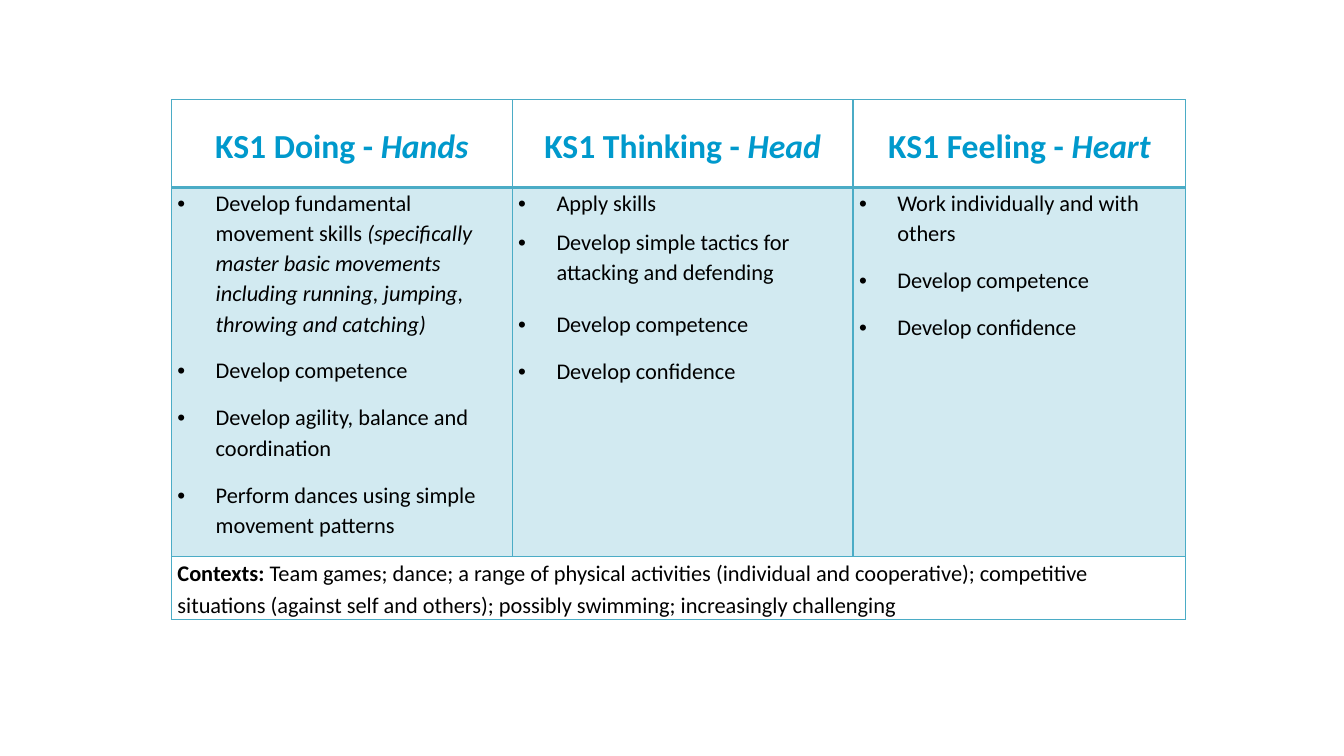
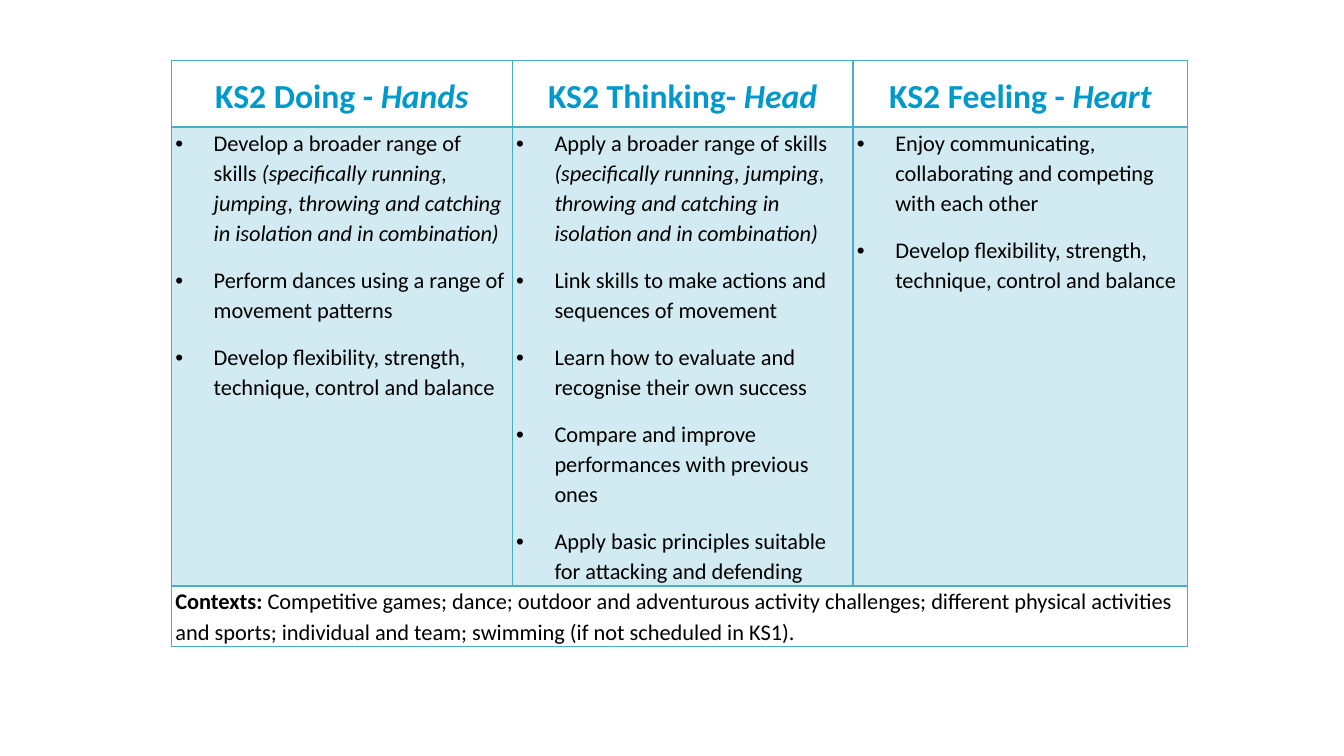
from dataclasses import dataclass

from lxml import etree
from pptx import Presentation
from pptx import util as u
from pptx.dml.color import RGBColor
from pptx.enum import text
from pptx.oxml import ns


@dataclass(frozen=True)
class Theme:
    """Colours, type sizes and line widths used by every slide."""
    font: str = "Calibri"
    heading: str = "0099CC"
    ink: str = "000000"
    panel: str = "D2EAF1"
    rule: str = "4BACC6"
    heading_size: float = 24
    body_size: float = 16
    thin: float = 1
    thick: float = 2.25
    column: float = 3.38
    indent: float = 0.38


T = Theme()
HEADING = {"name": T.font, "size": u.Pt(T.heading_size), "bold": True}
BODY = {"name": T.font, "size": u.Pt(T.body_size), "bold": False}
SPACED = {"space_before": u.Pt(6), "space_after": u.Pt(6)}
TIGHT = {"space_before": u.Pt(0), "space_after": u.Pt(10)}

KS1 = {
    "box": (1.7, 0.99, 10.06, 5.14),
    "rows": (0.87, 3.66),
    "inset": 0.06,
    "headings": [("KS1 Doing - ", "Hands"), ("KS1 Thinking - ", "Head"),
                 ("KS1 Feeling - ", "Heart")],
    "lists": [
        [("Develop fundamental movement skills ",
          "(specifically master basic movements including running, jumping, "
          "throwing and catching)"),
         ("Develop competence",),
         ("Develop agility, balance and coordination",),
         ("Perform dances using simple movement patterns",)],
        [("Apply skills",),
         ("Develop simple tactics for attacking and defending",),
         ("Develop competence",),
         ("Develop confidence",)],
        [("Work individually and with others",),
         ("Develop competence",),
         ("Develop confidence",)],
    ],
    "tight": {(1, 1)},
    "contexts": " Team games; dance; a range of physical activities (individual and "
                "cooperative); competitive situations (against self and others); "
                "possibly swimming; increasingly challenging",
    "contexts_spacing": 1.15,
}

KS2 = {
    "box": (1.7, 0.6, 10.08, 5.73),
    "rows": (0.66, 4.48),
    "inset": 0.04,
    "headings": [("KS2 Doing - ", "Hands"), ("KS2 Thinking- ", "Head"),
                 ("KS2 Feeling - ", "Heart")],
    "lists": [
        [("Develop a broader range of skills ",
          "(specifically running, jumping, throwing and catching in isolation "
          "and in combination)"),
         ("Perform dances using a range of movement patterns",),
         ("Develop flexibility, strength, technique, control and balance",)],
        [("Apply a broader range of skills ",
          "(specifically running, jumping, throwing and catching in isolation "
          "and in combination)"),
         ("Link skills to make actions and sequences of movement",),
         ("Learn how to evaluate and recognise their own success",),
         ("Compare and improve performances with previous ones",),
         ("Apply basic principles suitable for attacking and defending",)],
        [("Enjoy communicating, collaborating and competing with each other",),
         ("Develop flexibility, strength, technique, control and balance",)],
    ],
    "tight": set(),
    "contexts": " Competitive games; dance; outdoor and adventurous activity challenges; "
                "different physical activities and sports; individual and team; "
                "swimming (if not scheduled in KS1).",
    "contexts_spacing": 1.1,
}


def apply(obj, values):
    """Set each named attribute of an object."""
    for name, value in values.items():
        setattr(obj, name, value)


def add_run(p, words, font, color, **extra):
    """Append a formatted run to a paragraph."""
    r = p.add_run()
    r.text = words
    apply(r.font, {**font, **extra})
    r.font.color.rgb = RGBColor.from_string(color)


def add_bullet(p):
    """Give a paragraph a round bullet and a hanging indent."""
    pPr = p._p.get_or_add_pPr()
    indent = u.Inches(T.indent)
    pPr.set("marL", str(indent))
    pPr.set("indent", str(-indent))
    etree.SubElement(pPr, ns.qn("a:buFont")).set("typeface", "Arial")
    etree.SubElement(pPr, ns.qn("a:buChar")).set("char", "•")


def style_cell(cell, inset, widths, fill=None):
    """Set a cell's margins, borders (left, right, top, bottom) and fill."""
    apply(cell, {"margin_left": u.Inches(inset), "margin_right": u.Inches(inset),
                 "margin_top": 0, "margin_bottom": 0})
    tcPr = cell._tc.get_or_add_tcPr()
    for side, width in zip("LRTB", widths):
        ln = etree.SubElement(tcPr, ns.qn(f"a:ln{side}"), w=str(u.Pt(width)))
        solid = etree.SubElement(ln, ns.qn("a:solidFill"))
        etree.SubElement(solid, ns.qn("a:srgbClr"), val=T.rule)
    if fill:
        cell.fill.solid()
        cell.fill.fore_color.rgb = RGBColor.from_string(fill)
    else:
        cell.fill.background()


def fill_heading(cell, words, inset):
    """Write one column heading, its second part in italics."""
    style_cell(cell, inset, (T.thin, T.thin, T.thin, T.thick))
    cell.vertical_anchor = text.MSO_ANCHOR.MIDDLE
    p = cell.text_frame.paragraphs[0]
    apply(p, {"alignment": text.PP_ALIGN.CENTER, "line_spacing": 1.15,
              "space_after": u.Pt(6)})
    for part, italic in zip(words, (False, True)):
        add_run(p, part, HEADING, T.heading, italic=italic)


def fill_list(cell, items, inset, tight):
    """Write the bulleted list of one column."""
    style_cell(cell, inset, (T.thin, T.thin, T.thick, T.thin), T.panel)
    tf = cell.text_frame
    for i, item in enumerate(items):
        p = tf.paragraphs[0] if i == 0 else tf.add_paragraph()
        add_bullet(p)
        apply(p, {"line_spacing": 1.1, **(TIGHT if i in tight else SPACED)})
        if i == 0:
            p.space_before = u.Pt(0)
        for part, italic in zip(item, (False, True)):
            add_run(p, part, BODY, T.ink, italic=italic)


def fill_contexts(cells, words, inset, spacing):
    """Merge the last row and write the contexts in it."""
    for cell in cells:
        style_cell(cell, inset, (T.thin,) * 4)
    cells[0].merge(cells[-1])
    p = cells[0].text_frame.paragraphs[0]
    p.line_spacing = spacing
    add_run(p, "Contexts:", BODY, T.ink, bold=True)
    add_run(p, words, BODY, T.ink)


def add_stage_table(s, stage):
    """Place the table of one key stage in its box."""
    left, top, width, height = stage["box"]
    inset = stage["inset"]
    table = s.shapes.add_table(3, 3, *map(u.Inches, stage["box"])).table
    apply(table, {"first_row": False, "horz_banding": False})
    widths = (T.column, T.column, width - 2 * T.column)
    heights = (*stage["rows"], height - sum(stage["rows"]))
    for column, w in zip(table.columns, widths):
        column.width = u.Inches(w)
    for row, h in zip(table.rows, heights):
        row.height = u.Inches(h)
    for c, (heading, items) in enumerate(zip(stage["headings"], stage["lists"])):
        fill_heading(table.cell(0, c), heading, inset)
        fill_list(table.cell(1, c), items, inset,
                  {i for column, i in stage["tight"] if column == c})
    fill_contexts([table.cell(2, c) for c in range(3)], stage["contexts"], inset,
                  stage["contexts_spacing"])


def main():
    """Build and save the presentation."""
    prs = Presentation()
    apply(prs, {"slide_width": u.Inches(13.33), "slide_height": u.Inches(7.5)})
    for stage in (KS1, KS2):
        add_stage_table(prs.slides.add_slide(prs.slide_layouts[6]), stage)
    prs.save("out.pptx")


if __name__ == "__main__":
    main()
